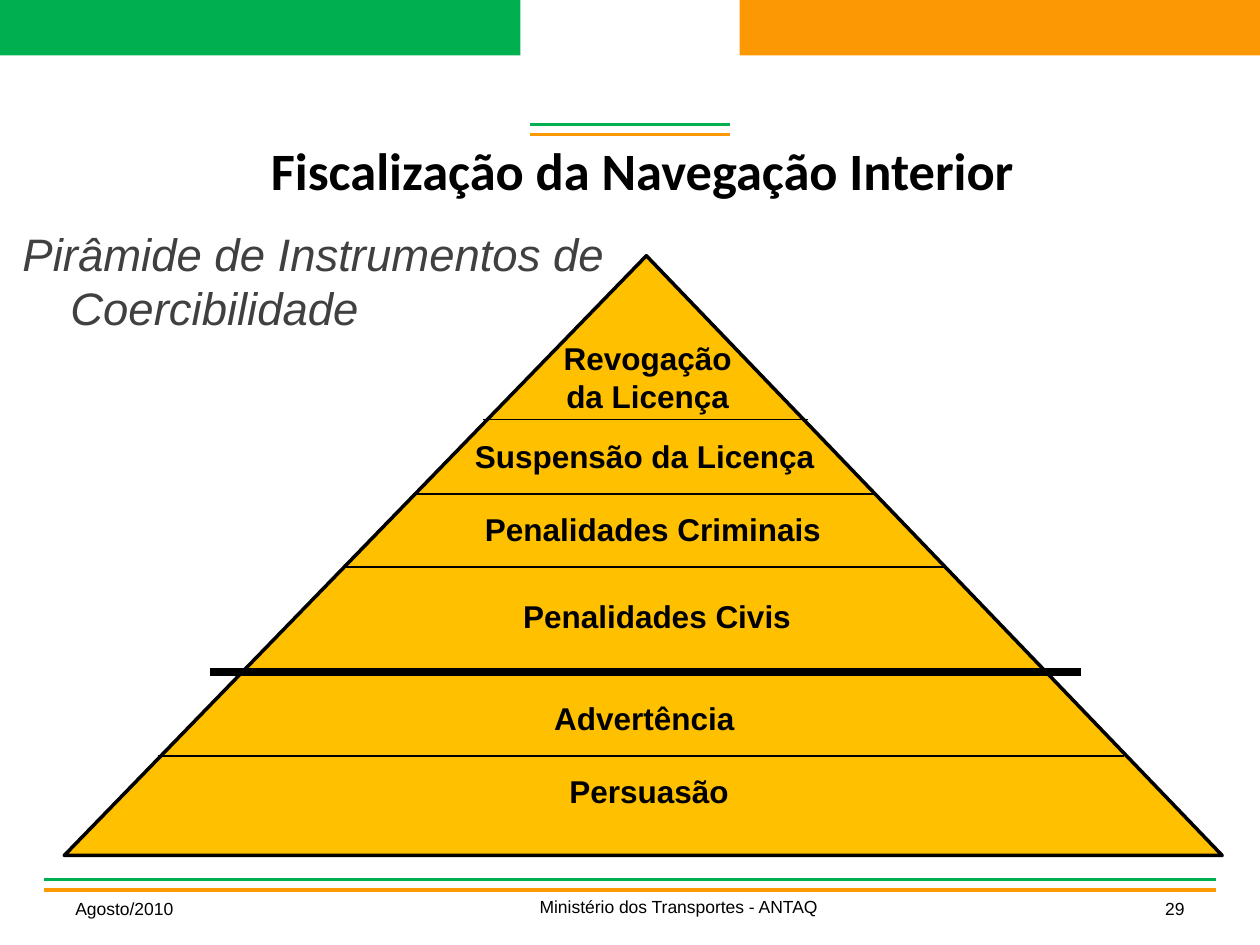
"""Build the slide on the pyramid of enforcement instruments."""
import pptx
import pptx.chart.data
import pptx.dml.color
import pptx.enum.shapes
import pptx.enum.text
import pptx.oxml
import pptx.util
import lxml.etree

ALIGN = pptx.enum.text.PP_ALIGN
ANCHOR = pptx.enum.text.MSO_ANCHOR
WIDTH, HEIGHT = 10, 7.5
GREEN, ORANGE, YELLOW, BLACK, GREY = "00B050", "FC9804", "FFC000", "000000", "404040"

TITLE = "Fiscalização da Navegação Interior"
SUBTITLE = "Pirâmide de Instrumentos de Coercibilidade"
BANNER = (0.413 * WIDTH, 0.44)
RULE_PAIRS = [(0.421, 0.99, 0.08, 1.5), (0.035, 6.98, 0.08, 2.25)]
PYRAMID = [(0.51, 6.79), (9.7, 6.79), (5.13, 2.03)]
LEVELS = [
    ("Revogação da Licença", (4.3, 2.64, 1.68, 0.71), ALIGN.CENTER, True),
    ("Suspensão da Licença", (3.67, 3.42, 2.92, 0.4), ALIGN.LEFT, True),
    ("Penalidades Criminais", (3.75, 4, 2.89, 0.4), ALIGN.LEFT, False),
    ("Penalidades Civis", (3.83, 4.69, 2.77, 0.4), ALIGN.CENTER, True),
    ("Advertência", (4.3, 5.5, 2.61, 0.4), ALIGN.LEFT, True),
    ("Persuasão", (4.42, 6.08, 1.48, 0.4), ALIGN.LEFT, False),
]
DIVIDERS = [
    (3.83, 6.41, 3.33, 0.75),
    (3.28, 6.95, 3.92, 0.75),
    (2.73, 7.5, 4.5, 0.75),
    (1.67, 8.58, 5.33, 4.5),
    (1.25, 8.92, 6, 0.75),
]
FOOTERS = [
    ("Ministério dos Transportes - ANTAQ", (3.8, 7.06, 3.17, 0.29), ALIGN.CENTER),
    ("Agosto/2010", (0.5, 7.08, 2.33, 0.29), ALIGN.LEFT),
    ("29", (7.17, 7.08, 2.33, 0.29), ALIGN.RIGHT),
]


def inches(values):
    """Turn numbers into lengths."""
    return [pptx.util.Inches(value) for value in values]


def color(code):
    """Turn a hex string into a colour."""
    return pptx.dml.color.RGBColor.from_string(code)


def assign(target, values):
    """Set each attribute in a dict of format values."""
    for name, value in values.items():
        setattr(target, name, value)


def paint(shape, fill, line=None, weight=0):
    """Give a shape a plain fill and an optional outline."""
    shape.shadow.inherit = False
    shape.fill.solid()
    shape.fill.fore_color.rgb = color(fill)
    if line:
        shape.line.color.rgb = color(line)
        shape.line.width = pptx.util.Pt(weight)
    else:
        shape.line.fill.background()


def add_rule(page, left, right, top, weight, code):
    """Draw a horizontal line."""
    rule = page.shapes.add_connector(
        pptx.enum.shapes.MSO_CONNECTOR.STRAIGHT, *inches((left, top, right, top)))
    rule.line.color.rgb = color(code)
    rule.line.width = pptx.util.Pt(weight)
    lxml.etree.SubElement(rule.element.spPr, pptx.oxml.ns.qn("a:effectLst"))


def write(box, text, size, align=ALIGN.LEFT, code=BLACK, frame=None, font=None):
    """Fill a box with one formatted paragraph."""
    assign(box.text_frame, {"word_wrap": True, "vertical_anchor": ANCHOR.TOP, **(frame or {})})
    para = box.text_frame.paragraphs[0]
    para.alignment = align
    span = para.add_run()
    span.text = text
    assign(span.font, {"name": "Arial", "size": pptx.util.Pt(size), **(font or {})})
    span.font.color.rgb = color(code)
    return para


def main():
    """Compose and save the slide."""
    deck = pptx.Presentation()
    deck.slide_width, deck.slide_height = inches((WIDTH, HEIGHT))
    page = deck.slides.add_slide(deck.slide_layouts[5])

    for left, code in ((0, GREEN), (WIDTH - BANNER[0], ORANGE)):
        banner = page.shapes.add_shape(
            pptx.enum.shapes.MSO_SHAPE.RECTANGLE, *inches((left, 0, *BANNER)))
        paint(banner, code)
    for share, top, gap, weight in RULE_PAIRS:
        left = share * WIDTH
        for row, code in enumerate((GREEN, ORANGE)):
            add_rule(page, left, WIDTH - left, top + row * gap, weight, code)

    corners = [inches(corner) for corner in PYRAMID]
    builder = page.shapes.build_freeform(*corners[0])
    builder.add_line_segments(corners[1:], close=True)
    paint(builder.convert_to_shape(), YELLOW, BLACK, 2)

    for text, place, align, wrap in LEVELS:
        box = page.shapes.add_textbox(*inches(place))
        write(box, text, 18, align, frame={"word_wrap": wrap}, font={"bold": True})
    for left, right, top, weight in DIVIDERS:
        add_rule(page, left, right, top, weight, BLACK)

    box = page.shapes.add_textbox(*inches((0.08, 1.87, 5.78, 0.71)))
    para = write(box, SUBTITLE, 26, code=GREY,
                 frame={"vertical_anchor": ANCHOR.MIDDLE}, font={"italic": True})
    hang = pptx.util.Inches(0.38)
    for name, value in (("marL", hang), ("indent", -hang)):
        para._p.get_or_add_pPr().set(name, str(value))

    title = page.shapes.title
    assign(title, dict(zip(("left", "top", "width", "height"), inches((1.2, 1.23, 7.8, 0.38)))))
    para = write(title, TITLE, 30, ALIGN.CENTER,
                 frame={"margin_top": 0, "margin_bottom": 0,
                        "auto_size": pptx.enum.text.MSO_AUTO_SIZE.NONE},
                 font={"name": "Calibri", "bold": True})
    para.line_spacing = 0.7

    for text, place, align in FOOTERS:
        write(page.shapes.add_textbox(*inches(place)), text, 10, align)

    deck.save("out.pptx")


if __name__ == "__main__":
    main()
